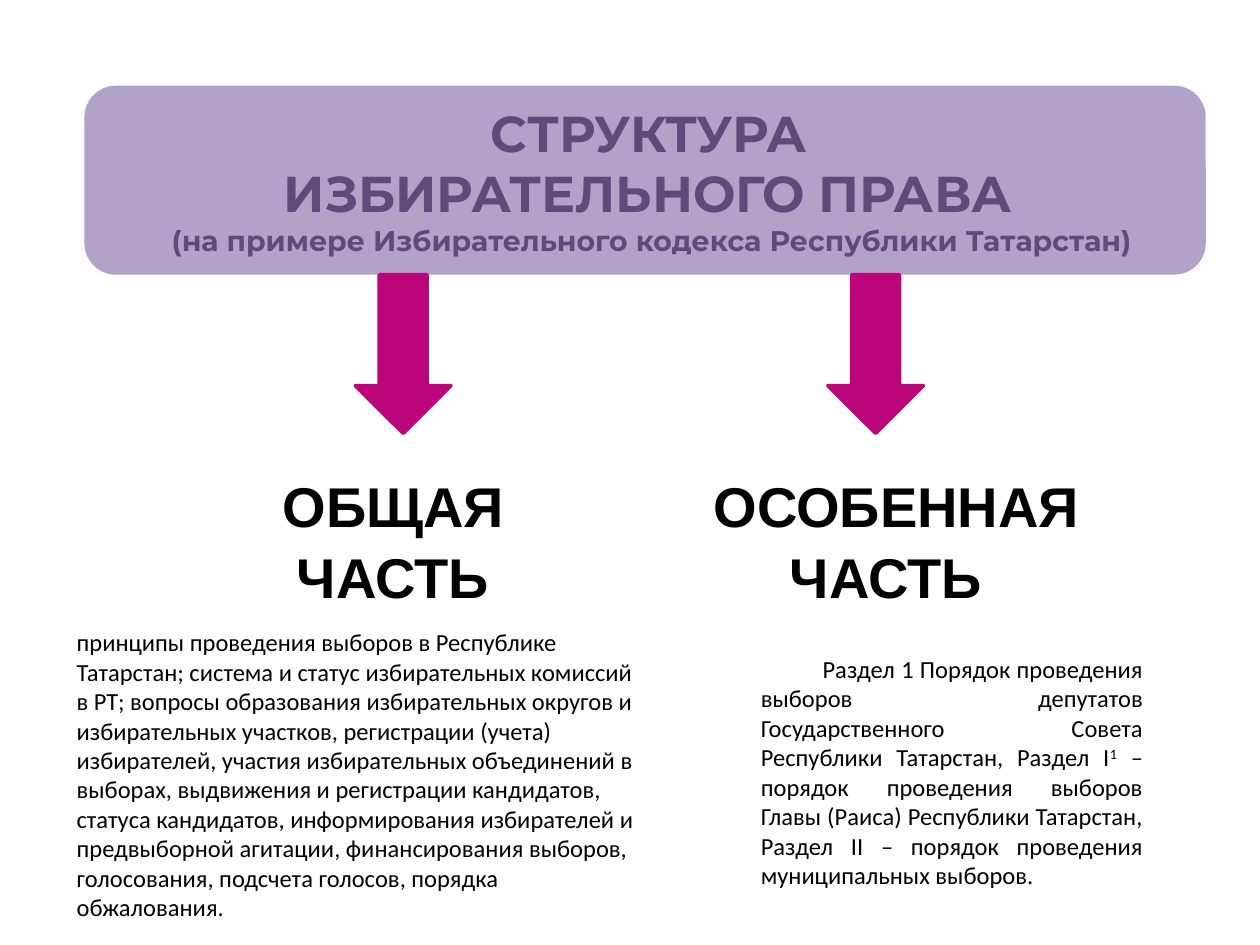
from dataclasses import dataclass

from lxml.etree import SubElement
from pptx import Presentation
from pptx.dml.color import RGBColor
from pptx.enum.shapes import MSO_SHAPE as Preset
from pptx.enum.text import MSO_ANCHOR as Anchor, MSO_AUTO_SIZE as AutoSize, PP_ALIGN as Align
from pptx.oxml.ns import qn
from pptx.util import Inches, Pt


@dataclass(frozen=True)
class Theme:
    banner: str = "B3A2C7"
    title: str = "604A7B"
    arrow: str = "BD057B"
    text: str = "000000"
    title_font: str = "Montserrat"
    heading_font: str = "Arial"
    body_font: str = "Calibri"
    title_size: float = 28.8
    subtitle_size: float = 16.2
    heading_size: float = 32
    body_size: float = 14


class SlideBuilder:
    """Places elements by percentages of the slide's width and height."""

    def __init__(self, presentation, theme):
        self.theme = theme
        self.width = presentation.slide_width
        self.height = presentation.slide_height
        self.slide = presentation.slides.add_slide(presentation.slide_layouts[5])

    def box(self, left, top, width, height):
        return (int(self.width * left / 100), int(self.height * top / 100),
                int(self.width * width / 100), int(self.height * height / 100))

    def shape(self, preset, area, color, line_width=0):
        shape = self.slide.shapes.add_shape(preset, *self.box(*area))
        shape.shadow.inherit = False
        shape.fill.solid()
        shape.fill.fore_color.rgb = RGBColor.from_string(color)
        if line_width:
            shape.line.color.rgb = RGBColor.from_string(color)
            shape.line.width = Pt(line_width)
            SubElement(shape.element.spPr.find(qn("a:ln")), qn("a:round"))
        else:
            shape.line.fill.background()
        return shape

    def format_frame(self, shape, align, anchor=Anchor.TOP, wrap=True, grow=False,
                     margin=0, indent=0):
        frame = shape.text_frame
        frame.word_wrap = wrap
        frame.auto_size = AutoSize.SHAPE_TO_FIT_TEXT if grow else AutoSize.NONE
        frame.vertical_anchor = anchor
        paragraph = frame.paragraphs[0]
        paragraph.alignment = align
        properties = paragraph._p.get_or_add_pPr()
        properties.set("marL", str(Inches(margin)))
        properties.set("indent", str(Inches(indent)))
        return paragraph

    def add_run(self, paragraph, text, font, size, color, bold=False, baseline=0):
        run = paragraph.add_run()
        run.text = text
        run.font.name = font
        run.font.size = Pt(size)
        run.font.bold = bold
        run.font.color.rgb = RGBColor.from_string(color)
        if baseline:
            run._r.get_or_add_rPr().set("baseline", str(baseline * 1000))

    def add_lines(self, paragraph, lines, *style):
        for index, line in enumerate(lines):
            if index:
                paragraph.add_line_break()
            self.add_run(paragraph, line, *style)

    def title(self, area, lines, subtitle):
        theme = self.theme
        title = self.slide.shapes.title
        title.left, title.top, title.width, title.height = self.box(*area)
        paragraph = self.format_frame(title, Align.CENTER, Anchor.MIDDLE,
                                      margin=0.38, indent=0.01)
        paragraph.space_before = Pt(6)
        self.add_lines(paragraph, lines, theme.title_font, theme.title_size, theme.title, True)
        paragraph.add_line_break()
        self.add_run(paragraph, subtitle, theme.title_font, theme.subtitle_size,
                     theme.title, True)

    def banner(self, area):
        banner = self.shape(Preset.ROUNDED_RECTANGLE, area, self.theme.banner)
        self.slide.shapes.title.element.addprevious(banner.element)

    def arrow(self, area):
        self.shape(Preset.DOWN_ARROW, area, self.theme.arrow, line_width=2)

    def heading(self, area, lines, **layout):
        theme = self.theme
        shape = self.slide.shapes.add_textbox(*self.box(*area))
        paragraph = self.format_frame(shape, Align.CENTER, **layout)
        paragraph.line_spacing = 1.05
        self.add_lines(paragraph, lines, theme.heading_font, theme.heading_size,
                       theme.text, True)

    def body(self, area, runs, align=Align.LEFT, **layout):
        theme = self.theme
        shape = self.slide.shapes.add_textbox(*self.box(*area))
        paragraph = self.format_frame(shape, align, grow=True, **layout)
        for text, baseline in runs:
            self.add_run(paragraph, text, theme.body_font, theme.body_size, theme.text,
                         baseline=baseline)


def main():
    presentation = Presentation()
    presentation.slide_width = Inches(10)
    presentation.slide_height = Inches(7.5)
    builder = SlideBuilder(presentation, Theme())

    # Title on its banner
    builder.banner((6.7, 9.07, 89, 20))
    builder.title((5.1, 8, 90, 22), ["СТРУКТУРА ", "ИЗБИРАТЕЛЬНОГО ПРАВА "],
                  "(на примере Избирательного кодекса Республики Татарстан) ")

    # Arrows to the two parts
    for left in (28.2, 65.7):
        builder.arrow((left, 29.07, 7.6, 16.8))

    # Part headings
    builder.heading((11.4, 48.93, 37, 25.2), ["ОБЩАЯ ", "ЧАСТЬ "], margin=0.38, indent=0.01)
    builder.heading((51.6, 48.93, 35.2, 15.73), ["ОСОБЕННАЯ", " ЧАСТЬ"],
                    wrap=False, grow=True, margin=0.1, indent=0.29)

    # Part contents
    builder.body((5.1, 65.73, 46.9, 32.8), [(
        "принципы проведения выборов в Республике Татарстан; система и статус "
        "избирательных комиссий в РТ; вопросы образования избирательных округов и "
        "избирательных участков, регистрации (учета) избирателей, участия "
        "избирательных объединений в выборах, выдвижения и регистрации кандидатов, "
        "статуса кандидатов, информирования избирателей и предвыборной агитации, "
        "финансирования выборов, голосования, подсчета голосов, порядка обжалования.", 0)])
    builder.body((59.4, 68.4, 32.3, 26.53), [
        ("Раздел 1 Порядок проведения выборов депутатов Государственного Совета "
         "Республики Татарстан, Раздел I", 0),
        ("1", 30),
        (" – порядок проведения выборов Главы (Раиса) Республики Татарстан, "
         "Раздел II – порядок проведения муниципальных выборов. ", 0),
    ], Align.JUSTIFY, anchor=Anchor.MIDDLE, indent=0.49)

    presentation.save("out.pptx")


if __name__ == "__main__":
    main()
